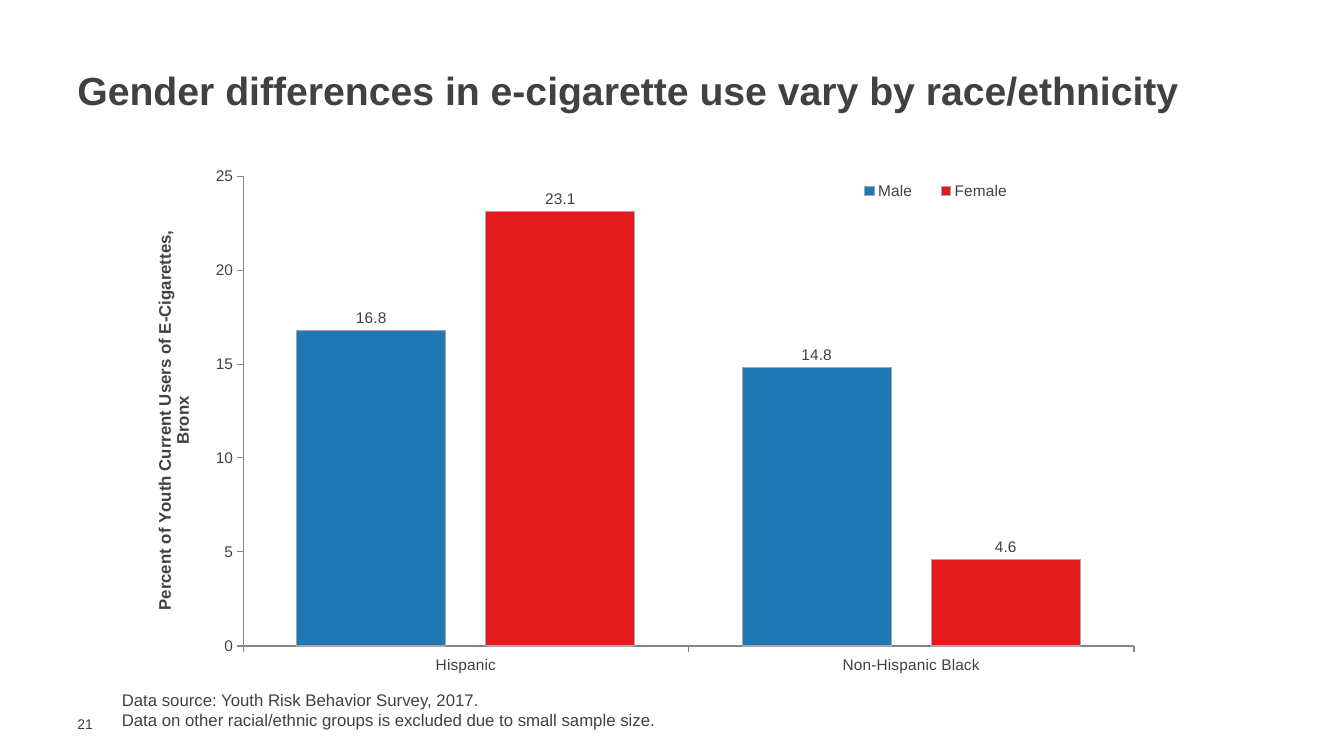
from lxml import etree
from pptx import Presentation
from pptx.chart.data import CategoryChartData
from pptx.dml.color import RGBColor
from pptx.enum.chart import XL_CHART_TYPE as ChartType
from pptx.enum.chart import XL_LABEL_POSITION as LabelPosition
from pptx.enum.chart import XL_LEGEND_POSITION as LegendPosition
from pptx.enum.chart import XL_TICK_MARK as TickMark
from pptx.enum.text import MSO_ANCHOR as Anchor
from pptx.oxml.ns import qn
from pptx.util import Pt

COLORS = {
    "text": "414042",
    "male": "1F78B4",
    "female": "E31A1C",
    "outline": "A6A6A6",
    "axis": "868686",
}
FONT = "Arial"


def color(name):
    return RGBColor.from_string(COLORS[name])


def style_font(font, size, bold=False):
    for name, value in {"name": FONT, "size": Pt(size), "bold": bold}.items():
        setattr(font, name, value)
    font.color.rgb = color("text")


def style_line(line, name):
    line.color.rgb = color(name)
    line.width = Pt(0.75)


def add_text(slide, box, lines, size, bold=False, spacing=None, **frame_format):
    shape = slide.shapes.add_textbox(*map(Pt, box))
    frame = shape.text_frame
    frame.word_wrap = True
    for name, value in frame_format.items():
        setattr(frame, name, value)
    for index, line in enumerate(lines):
        paragraph = frame.add_paragraph() if index else frame.paragraphs[0]
        if spacing:
            paragraph.line_spacing = spacing
        run = paragraph.add_run()
        run.text = line
        style_font(run.font, size, bold)


def manual_layout(x, y, width, height, inner=False):
    layout = etree.Element(qn("c:layout"))
    manual = etree.SubElement(layout, qn("c:manualLayout"))
    values = {"layoutTarget": "inner"} if inner else {}
    values.update(xMode="edge", yMode="edge", x=x, y=y, w=width, h=height)
    for name, value in values.items():
        etree.SubElement(manual, qn(f"c:{name}")).set("val", str(value))
    return layout


def remove_layout(element):
    for layout in element.findall(qn("c:layout")):
        element.remove(layout)


def style_axes(chart):
    for axis in (chart.category_axis, chart.value_axis):
        axis.has_major_gridlines = False
        axis.major_tick_mark = TickMark.OUTSIDE
        axis.minor_tick_mark = TickMark.NONE
        style_line(axis.format.line, "axis")
        style_font(axis.tick_labels.font, 11)

    value_axis = chart.value_axis
    scale = {"minimum_scale": 0, "maximum_scale": 25, "major_unit": 5}
    for name, value in scale.items():
        setattr(value_axis, name, value)
    frame = value_axis.axis_title.text_frame
    frame.text = "Percent of Youth Current Users of E-Cigarettes, Bronx"
    style_font(frame.paragraphs[0].runs[0].font, 12, bold=True)
    body = frame._txBody.find(qn("a:bodyPr"))
    body.set("rot", "-5400000")
    body.set("vert", "horz")


def style_legend(chart):
    chart.has_legend = True
    legend = chart.legend
    legend.position = LegendPosition.TOP
    legend.include_in_layout = False
    style_font(legend.font, 11)
    element = legend._element
    remove_layout(element)
    position = element.find(qn("c:legendPos"))
    position.addnext(manual_layout(0.69, 0.03, 0.19, 0.06))


def add_usage_chart(slide, box):
    data = CategoryChartData(number_format="0.0")
    data.categories = ["Hispanic", "Non-Hispanic Black"]
    data.add_series("Male", [16.8, 14.8])
    data.add_series("Female", [23.1, 4.6])
    chart = slide.shapes.add_chart(
        ChartType.COLUMN_CLUSTERED, *map(Pt, box), data).chart
    chart.has_title = False
    style_font(chart.font, 11)
    style_axes(chart)
    chart.value_axis.tick_labels.number_format = "0"
    chart.value_axis.tick_labels.number_format_is_linked = False
    style_legend(chart)

    # Columns and their values
    plot = chart.plots[0]
    plot_format = {"gap_width": 72, "overlap": -27, "vary_by_categories": False}
    for name, value in plot_format.items():
        setattr(plot, name, value)
    for series, fill_name in zip(plot.series, ("male", "female")):
        series.format.fill.solid()
        series.format.fill.fore_color.rgb = color(fill_name)
        style_line(series.format.line, "outline")
        labels = series.data_labels
        labels.show_value = True
        labels.position = LabelPosition.OUTSIDE_END
        style_font(labels.font, 11)

    # Fixed place of the plot area
    area = plot._element.getparent()
    remove_layout(area)
    area.insert(0, manual_layout(0.092, 0.032, 0.891, 0.895, inner=True))


def main():
    presentation = Presentation()
    presentation.slide_width, presentation.slide_height = Pt(960), Pt(540)
    slide = presentation.slides.add_slide(presentation.slide_layouts[6])

    # Slide number
    add_text(slide, (48.2, 511.2, 31, 12.2), ["21"], 10,
             vertical_anchor=Anchor.MIDDLE,
             margin_top=0, margin_right=0, margin_bottom=0)

    # Title
    add_text(slide, (48.2, 49.7, 869.8, 34.6),
             ["Gender differences in e-cigarette use vary by race/ethnicity"],
             28, bold=True, spacing=0.8, vertical_anchor=Anchor.MIDDLE)

    # Source note
    add_text(slide, (79.9, 488.9, 699.1, 36),
             ["Data source: Youth Risk Behavior Survey, 2017.",
              "Data on other racial/ethnic groups is excluded due to small "
              "sample size."], 12)

    # Column chart
    add_usage_chart(slide, (108, 113.8, 714.2, 375.1))

    presentation.save("out.pptx")


if __name__ == "__main__":
    main()
